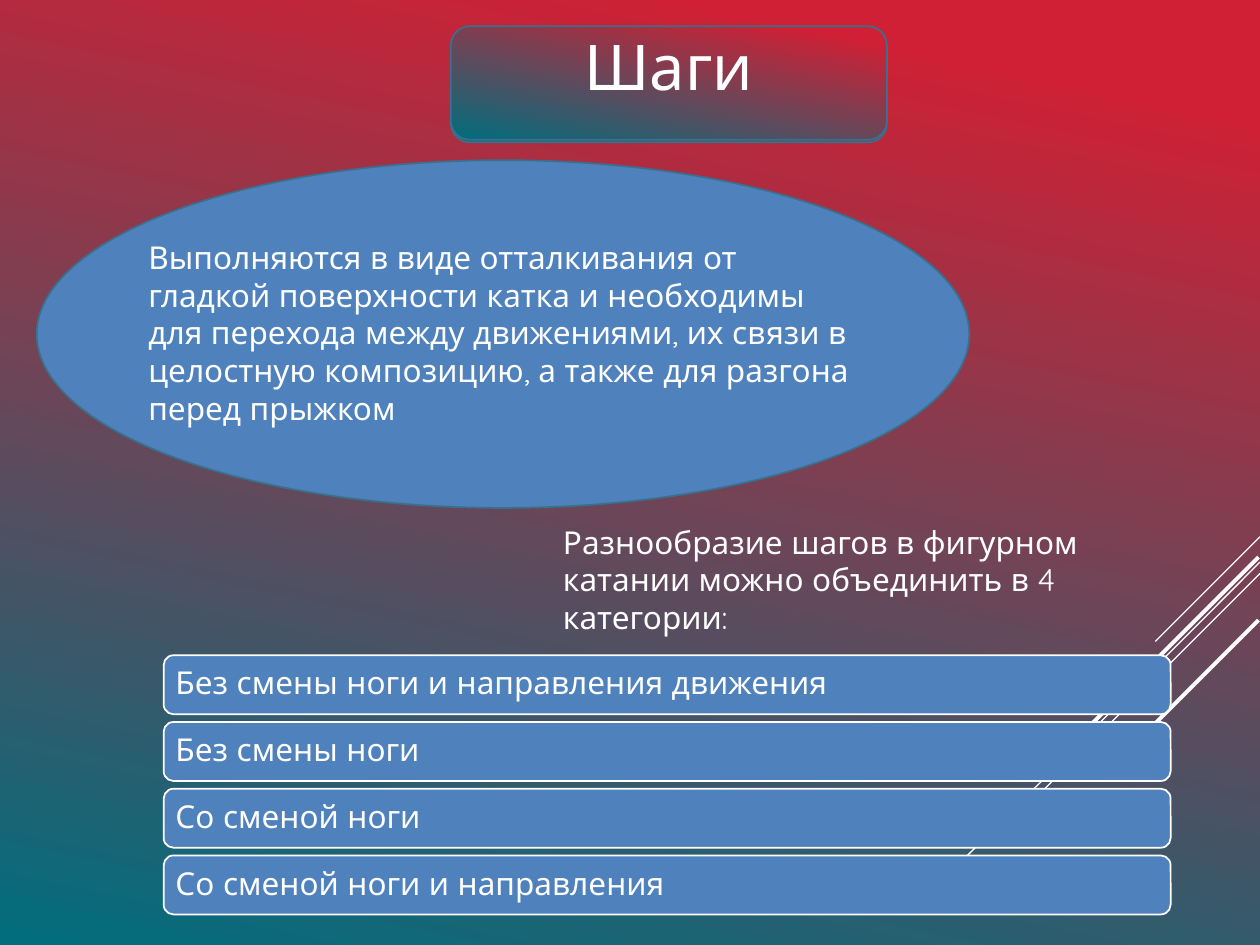
"""Build the slide about steps in figure skating."""
from pptx import Presentation
from pptx.dml.color import RGBColor
from pptx.enum.shapes import MSO_CONNECTOR as Connector, MSO_SHAPE as Shape
from pptx.enum.text import MSO_ANCHOR as Anchor, PP_ALIGN as Align
from pptx.oxml.ns import qn
from pptx.util import Cm, Pt
from lxml import etree

WHITE = RGBColor(0xFF, 0xFF, 0xFF)
RED = RGBColor(0xCF, 0x20, 0x35)
TEAL = RGBColor(0x00, 0x6E, 0x7E)
BLUE = RGBColor(0x4F, 0x81, 0xBD)
OUTLINE = RGBColor(0x3A, 0x70, 0x8C)
FONT = "Quicksand"


def fill_gradient(fill):
    fill.gradient()
    fill.gradient_angle = 258
    for stop, color, position in zip(fill.gradient_stops, (RED, TEAL), (0.1, 1)):
        stop.color.rgb = color
        stop.position = position


def write_text(shape, text, size, align=Align.LEFT, **frame_format):
    frame = shape.text_frame
    frame.word_wrap = True
    for name, value in frame_format.items():
        setattr(frame, name, value)
    paragraph = frame.paragraphs[0]
    paragraph.alignment = align
    run = paragraph.add_run()
    run.text = text
    for name, value in {"name": FONT, "size": Pt(size), "bold": False}.items():
        setattr(run.font, name, value)
    run.font.color.rgb = WHITE
    return paragraph


presentation = Presentation()
presentation.slide_width = Cm(25.4)
presentation.slide_height = Cm(19.05)
slide = presentation.slides.add_slide(presentation.slide_layouts[5])
shapes = slide.shapes
fill_gradient(slide.background.fill)

stripes = [
    (25.4, 10.82, 23.29, 12.93, 0.75),
    (25.4, 11.33, 18.54, 18.21, 0.75),
    (25.4, 11.56, 21.03, 15.93, 0.75),
    (25.37, 11.23, 21.39, 15.21, 2.25),
    (25.37, 12.5, 22.48, 15.39, 2.25),
]
for *ends, width in stripes:
    stripe = shapes.add_connector(Connector.STRAIGHT, *map(Cm, ends))
    stripe.line.color.rgb = WHITE
    stripe.line.width = Pt(width)
    etree.SubElement(stripe._element.spPr, qn("a:effectLst"))

bar_texts = [
    "Без смены ноги и направления движения",
    "Без смены ноги",
    "Со сменой ноги",
    "Со сменой ноги и направления",
]
panels = [
    (Shape.FLOWCHART_ALTERNATE_PROCESS, 9.09, 0.58, 8.79, 2.29, None, OUTLINE, ""),
    (Shape.OVAL, 0.74, 3.23, 18.8, 7.01, BLUE, OUTLINE, ""),
]
for index, text in enumerate(bar_texts):
    panels.append((Shape.ROUNDED_RECTANGLE, 3.3, 13.21 + 1.345 * index,
                   20.3, 1.19, BLUE, WHITE, text))
panels.append((Shape.FLOWCHART_ALTERNATE_PROCESS, 9.09, 0.53, 8.79, 2.29, None, OUTLINE, ""))

for kind, left, top, width, height, color, outline, text in panels:
    panel = shapes.add_shape(kind, Cm(left), Cm(top), Cm(width), Cm(height))
    panel.shadow.inherit = False
    panel.line.color.rgb = outline
    panel.line.width = Pt(1)
    if color is None:
        fill_gradient(panel.fill)
    else:
        panel.fill.solid()
        panel.fill.fore_color.rgb = color
    if text:
        paragraph = write_text(panel, text, 18, vertical_anchor=Anchor.MIDDLE,
                               margin_left=Cm(0.18), margin_right=Cm(0.18),
                               margin_top=Cm(0.18), margin_bottom=Cm(0.18))
        paragraph.line_spacing = 0.9

notes = [
    (2.74, 4.67, 14.76, 4.11, "Выполняются в виде отталкивания от гладкой поверхности катка и "
     "необходимы для перехода между движениями, их связи в целостную композицию, "
     "а также для разгона перед прыжком"),
    (11.1, 10.41, 13.31, 3.33,
     "Разнообразие шагов в фигурном катании можно объединить в 4 категории:"),
]
for left, top, width, height, text in notes:
    box = shapes.add_textbox(Cm(left), Cm(top), Cm(width), Cm(height))
    write_text(box, text, 18)

title = shapes.title
title_format = {"left": Cm(9.09), "top": Cm(0.46), "width": Cm(8.79), "height": Cm(1.73)}
for name, value in title_format.items():
    setattr(title, name, value)
write_text(title, "Шаги", 36, Align.CENTER, vertical_anchor=Anchor.MIDDLE,
           margin_top=0, margin_bottom=0)
shapes._spTree.append(title._element)

presentation.save("out.pptx")
